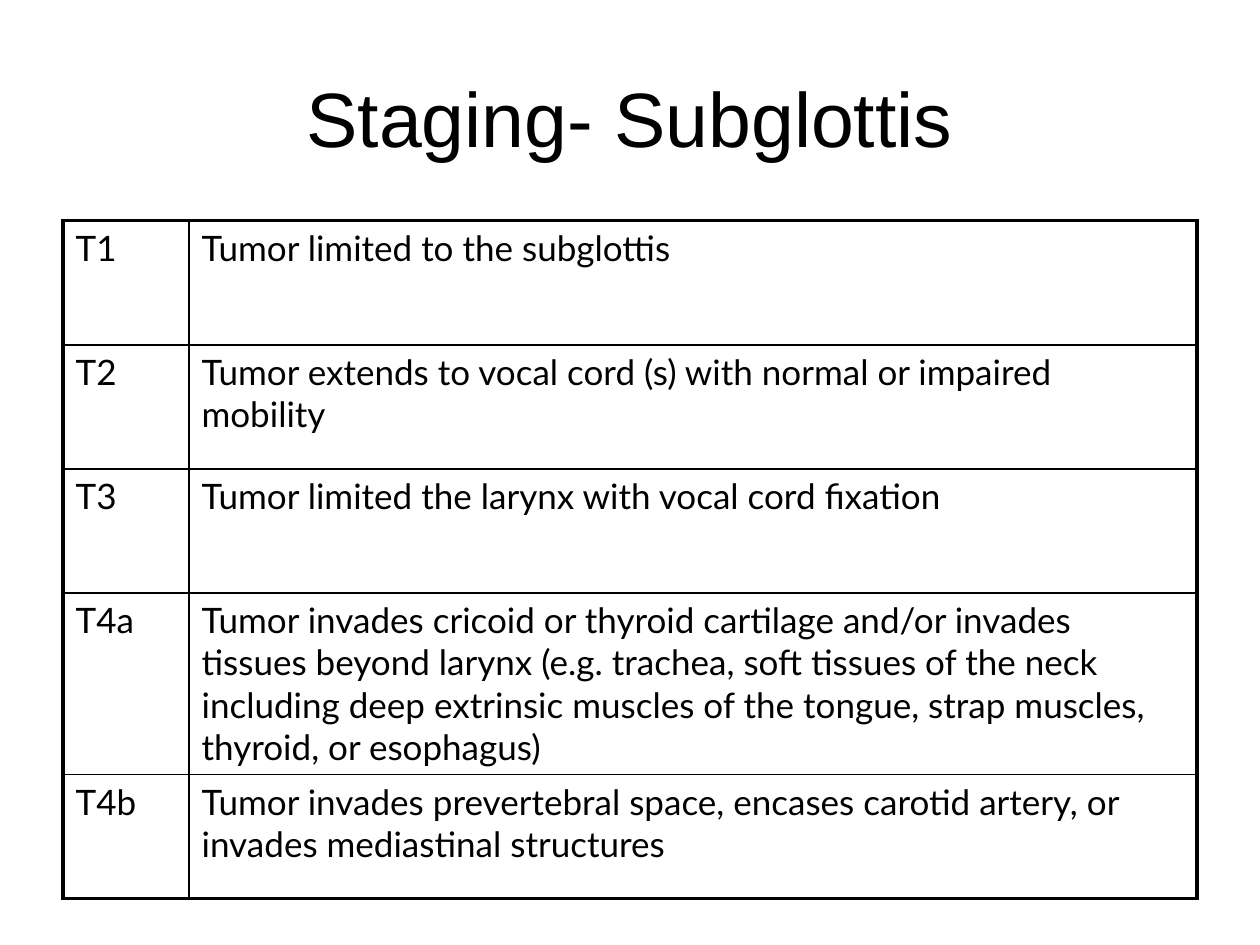
"""Build the slide on staging of the subglottis."""
from lxml import etree
from pptx import Presentation
from pptx.dml.color import RGBColor
from pptx.enum.text import MSO_ANCHOR, PP_ALIGN
from pptx.oxml.ns import qn
from pptx.util import Cm, Pt

MIDDLE = MSO_ANCHOR.MIDDLE
CENTER = PP_ALIGN.CENTER
COLORS = {"text": "000000", "line": "000000"}
THIN, THICK = Pt(1), Pt(2.25)
STAGES = [
    ("T1", "Tumor limited to the subglottis"),
    ("T2", "Tumor extends to vocal cord (s) with normal or impaired mobility"),
    ("T3", "Tumor limited the larynx with vocal cord fixation"),
    ("T4a", "Tumor invades cricoid or thyroid cartilage and/or invades tissues "
            "beyond larynx (e.g. trachea, soft tissues of the neck including "
            "deep extrinsic muscles of the tongue, strap muscles, thyroid, "
            "or esophagus)"),
    ("T4b", "Tumor invades prevertebral space, encases carotid artery, "
            "or invades mediastinal structures"),
]


def set_font(para, name, size):
    """Set the face, size and colour of a paragraph."""
    para.font.name = name
    para.font.size = Pt(size)
    para.font.color.rgb = RGBColor.from_string(COLORS["text"])


def add_title(slide, box, text):
    """Place the title in the box."""
    title = slide.shapes.title
    title.left, title.top, title.width, title.height = box
    frame = title.text_frame
    frame.text = text
    frame.vertical_anchor = MIDDLE
    para = frame.paragraphs[0]
    para.alignment = CENTER
    set_font(para, "Arial", 44)


def set_border(cell, side, width):
    """Draw one side of a cell."""
    props = cell._tc.get_or_add_tcPr()
    line = etree.SubElement(props, qn("a:ln" + side), w=str(width))
    fill = etree.SubElement(line, qn("a:solidFill"))
    etree.SubElement(fill, qn("a:srgbClr"), val=COLORS["line"])


def add_stages(slide, box, rows):
    """Fill the box with a table of stages, framed by a thick line."""
    left, top, width, height = box
    count = len(rows)
    table = slide.shapes.add_table(count, 2, left, top, width, height).table
    table.first_row = table.horz_banding = False
    code = width // 9
    table.columns[0].width = code
    table.columns[1].width = width - code
    for i, row in enumerate(rows):
        table.rows[i].height = height // count
        for j, text in enumerate(row):
            cell = table.cell(i, j)
            cell.text = text
            set_font(cell.text_frame.paragraphs[0], "Lato", 20)
            edges = {"L": j == 0, "R": j == 1,
                     "T": i == 0, "B": i == count - 1}
            for side, outer in edges.items():
                set_border(cell, side, THICK if outer else THIN)
            cell.fill.background()


def main():
    """Build and save the slide."""
    deck = Presentation()
    deck.slide_width, deck.slide_height = Cm(25.4), Cm(19.05)
    slide = deck.slides.add_slide(deck.slide_layouts[5])
    left, width = Cm(1.27), Cm(22.86)
    add_title(slide, (left, Cm(0.76), width, Cm(3.18)), "Staging- Subglottis")
    add_stages(slide, (left, Cm(4.45), width, Cm(12.5)), STAGES)
    deck.save("out.pptx")


if __name__ == "__main__":
    main()
